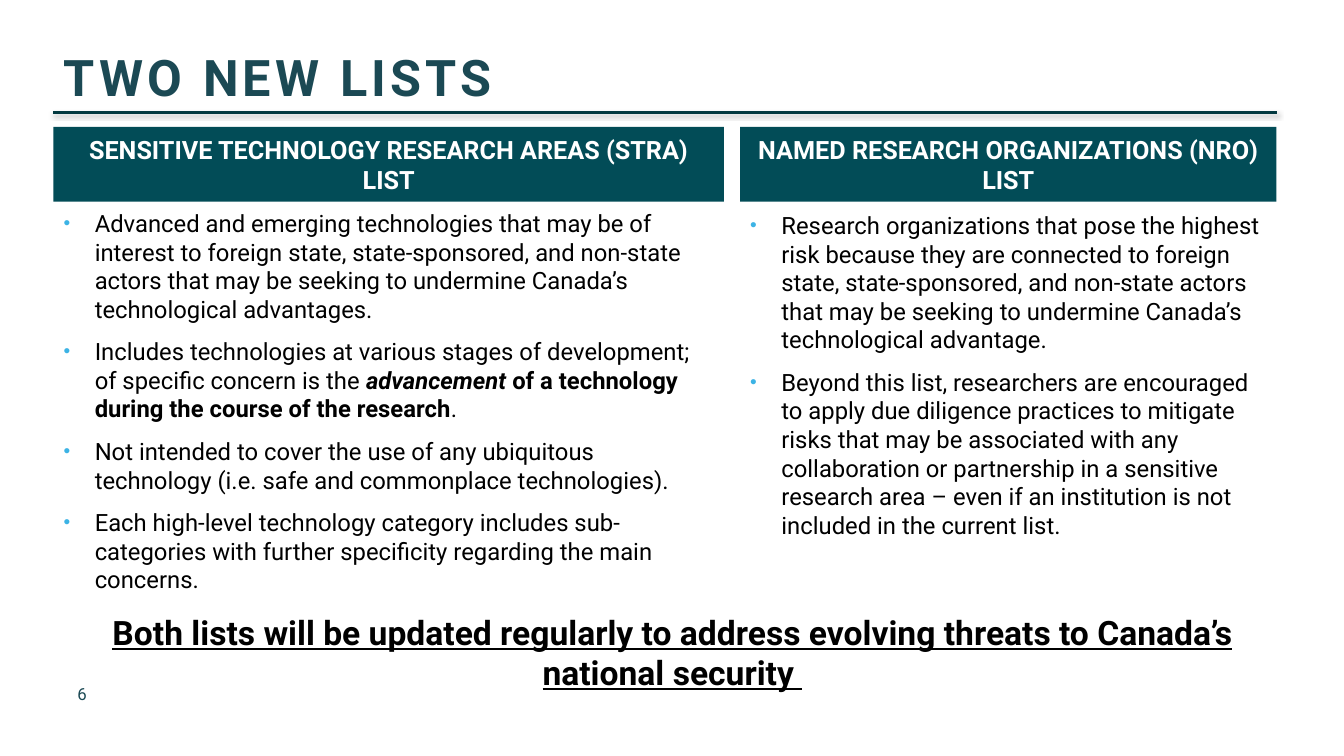
from dataclasses import dataclass

from lxml import etree
from pptx import Presentation
from pptx import util as u
from pptx.dml.color import RGBColor
from pptx.enum import shapes, text
from pptx.oxml import parse_xml
from pptx.oxml.ns import nsdecls, qn

# Content: a run is (text, style), where style holds "b" and/or "i"
TITLE = "TWO NEW LISTS"
COLUMNS = [
    {
        "heading": "SENSITIVE TECHNOLOGY RESEARCH AREAS (STRA) LIST",
        "left": 0.53, "width": 6.65, "top": 2.02, "height": 3.9,
        "bullets": [
            [("Advanced and emerging technologies that may be of interest to foreign state, "
              "state-sponsored, and non-state actors that may be seeking to undermine "
              "Canada’s technological advantages.", "")],
            [("Includes technologies at various stages of development; "
              "of specific concern is the ", ""),
             ("advancement", "bi"),
             (" of a technology during the course of the research", "b"),
             (".", "")],
            [("Not intended to cover the use of any ubiquitous technology "
              "(i.e. safe and commonplace technologies).", "")],
            [("Each high-level technology category includes sub-categories with further "
              "specificity regarding the main concerns.", "")],
        ],
    },
    {
        "heading": "NAMED RESEARCH ORGANIZATIONS (NRO) LIST",
        "left": 7.34, "width": 5.32, "top": 2.04, "height": 3.46,
        "bullets": [
            [("Research organizations that pose the highest risk because they are connected "
              "to foreign state, state-sponsored, and non-state actors that may be seeking "
              "to undermine Canada’s technological advantage.", "")],
            [("Beyond this list, researchers are encouraged to apply due diligence practices "
              "to mitigate risks that may be associated with any collaboration or "
              "partnership in a sensitive research area – even if an institution is not "
              "included in the current list.", "")],
        ],
    },
]
CLOSING = "Both lists will be updated regularly to address evolving threats to Canada’s national security "
PAGE_NUMBER = "6"


@dataclass(frozen=True)
class Theme:
    font: str = "Roboto"
    title: str = "1B4954"
    band: str = "024C57"
    rule: str = "023940"
    bullet: str = "3CB3E5"
    ink: str = "000000"
    paper: str = "FFFFFF"
    title_size: int = 36
    closing_size: int = 24
    heading_size: int = 18
    body_size: int = 17
    number_size: int = 12


THEME = Theme()
RULE_Y = 1.12
BAND_TOP, BAND_HEIGHT = 1.26, 0.74
INDENT = u.Inches(0.31)


def style(font, size, color, bold=False, italic=False):
    font.name, font.size = THEME.font, u.Pt(size)
    font.bold, font.italic = bold, italic
    font.color.rgb = RGBColor.from_string(color)


def place(shape, left, top, width, height, anchor):
    shape.left, shape.top = u.Inches(left), u.Inches(top)
    shape.width, shape.height = u.Inches(width), u.Inches(height)
    frame = shape.text_frame
    frame.word_wrap = True
    frame.auto_size = text.MSO_AUTO_SIZE.NONE
    frame.vertical_anchor = anchor
    return frame


def write_line(frame, words, size, color, align, bold=False):
    frame.text = words
    para = frame.paragraphs[0]
    para.alignment = align
    span = para.runs[0]
    style(span.font, size, color, bold)
    return para, span


def add_bullet(para):
    props = para._p.get_or_add_pPr()
    props.set("marL", str(INDENT))
    props.set("indent", str(-INDENT))
    color = etree.SubElement(props, qn("a:buClr"))
    etree.SubElement(color, qn("a:srgbClr"), val=THEME.bullet)
    etree.SubElement(props, qn("a:buSzPct"), val="80000")
    etree.SubElement(props, qn("a:buFont"), typeface="Arial")
    etree.SubElement(props, qn("a:buChar"), char="•")


def fill_list(frame, bullets):
    for index, runs in enumerate(bullets):
        para = frame.add_paragraph() if index else frame.paragraphs[0]
        add_bullet(para)
        para.space_before, para.space_after = u.Pt(0), u.Pt(10)
        for words, marks in runs:
            span = para.add_run()
            span.text = words
            style(span.font, THEME.body_size, THEME.ink, "b" in marks, "i" in marks)


def main():
    deck = Presentation()
    deck.slide_width, deck.slide_height = u.Inches(13.33), u.Inches(7.5)
    page = deck.slides.add_slide(deck.slide_layouts.get_by_name("Two Content"))
    title, *lists = page.placeholders
    left, center = text.PP_ALIGN.LEFT, text.PP_ALIGN.CENTER
    top, middle, bottom = text.MSO_ANCHOR.TOP, text.MSO_ANCHOR.MIDDLE, text.MSO_ANCHOR.BOTTOM

    # Title
    frame = place(title, 0.53, 0.03, 12, 1.08, bottom)
    _, span = write_line(frame, TITLE, THEME.title_size, THEME.title, left, True)
    span.font._element.set("spc", "300")

    # Rule with a soft shadow
    rule = page.shapes.add_connector(
        shapes.MSO_CONNECTOR.STRAIGHT,
        u.Inches(0.53), u.Inches(RULE_Y), u.Inches(12.67), u.Inches(RULE_Y))
    rule.line.color.rgb = RGBColor.from_string(THEME.rule)
    rule.line.width = u.Pt(2)
    rule._element.spPr.append(parse_xml(
        f'<a:effectLst {nsdecls("a")}>'
        f'<a:outerShdw blurRad="{u.Pt(3.1)}" dist="{u.Pt(1.6)}" dir="5400000" rotWithShape="0">'
        f'<a:srgbClr val="{THEME.ink}"><a:alpha val="38000"/></a:srgbClr>'
        '</a:outerShdw></a:effectLst>'))

    # Two columns: heading band and bullet list
    for column, body in zip(COLUMNS, lists):
        x, width = column["left"], column["width"]
        band = page.shapes.add_shape(shapes.MSO_SHAPE.RECTANGLE, 0, 0, 0, 0)
        band.shadow.inherit = False
        band.fill.solid()
        band.fill.fore_color.rgb = RGBColor.from_string(THEME.band)
        band.line.fill.background()
        frame = place(band, x, BAND_TOP, width, BAND_HEIGHT, middle)
        write_line(frame, column["heading"], THEME.heading_size, THEME.paper, center, True)
        frame = place(body, x, column["top"], width, column["height"], top)
        fill_list(frame, column["bullets"])

    # Closing statement
    box = page.shapes.add_textbox(0, 0, 0, 0)
    frame = place(box, 0.9, 6.02, 11.54, 0.91, top)
    para, span = write_line(frame, CLOSING, THEME.closing_size, THEME.ink, center, True)
    para.space_after = u.Pt(10)
    span.font.underline = True

    # Page number
    box = page.shapes.add_textbox(0, 0, 0, 0)
    frame = place(box, 0.67, 6.68, 1.43, 0.4, middle)
    write_line(frame, PAGE_NUMBER, THEME.number_size, THEME.title, left)

    deck.save("out.pptx")


if __name__ == "__main__":
    main()
